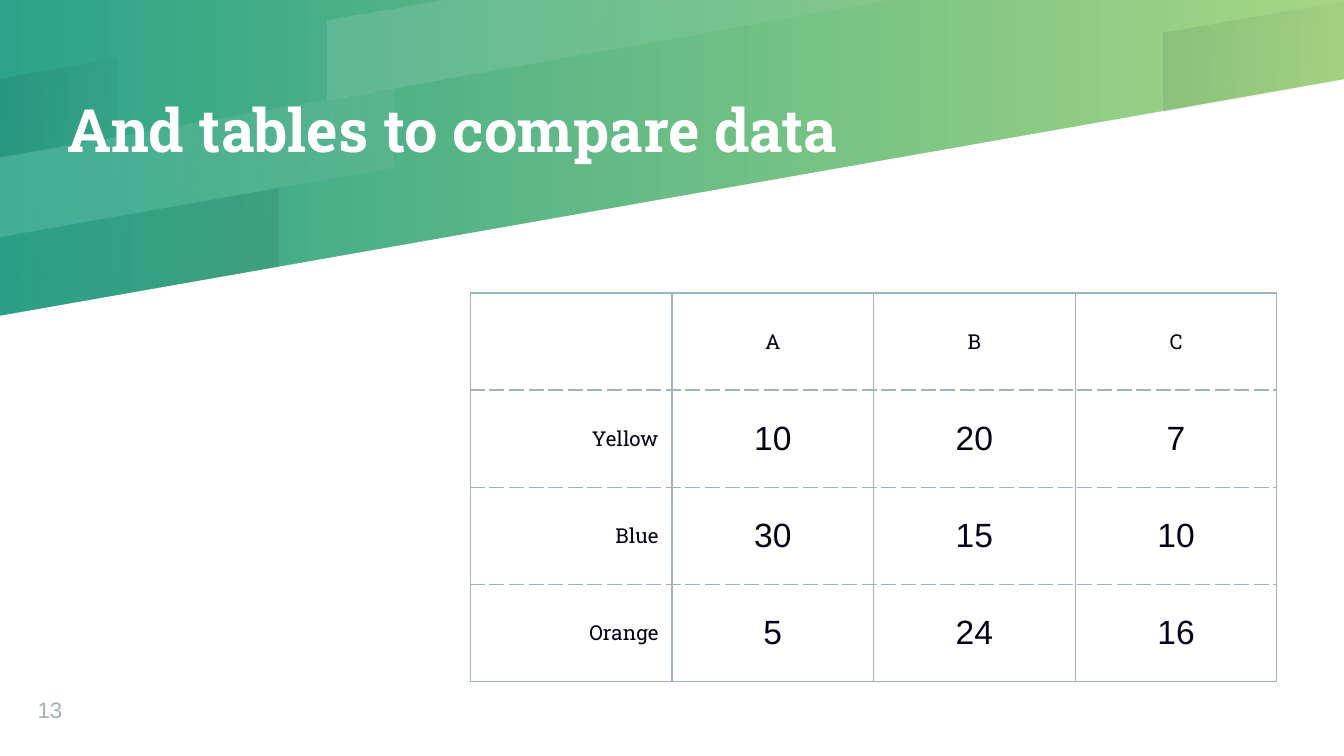
from dataclasses import dataclass

from lxml import etree
from pptx import Presentation
from pptx.dml.color import RGBColor
from pptx.enum import text
from pptx.oxml import ns
from pptx.util import Inches, Pt


@dataclass(frozen=True)
class Theme:
    """Colours, fonts and type sizes of the slide."""
    teal: str = "2CA388"
    lime: str = "A6D683"
    white: str = "FFFFFF"
    ink: str = "00001A"
    grey: str = "9EB3C2"
    head_font: str = "Roboto Slab"
    body_font: str = "Arial"
    title_size: int = 32
    value_size: int = 18
    label_size: int = 11
    number_size: int = 12
    border: float = 0.75


THEME = Theme()
SLOPE = 0.176
BAND_HEIGHT = 0.59
LIGHT = (THEME.white, 12, 5)
DARK = (THEME.ink, 8, 2)
DARK_REVERSED = (THEME.ink, 2, 8)
BANDS = [
    (0, 0.87, 0.58, DARK),
    (0, 2.07, 1.76, DARK_REVERSED),
    (8.66, 10, 0.24, DARK),
    (0, 2.93, 1.17, LIGHT),
]
ROWS = [
    ["", "A", "B", "C"],
    ["Yellow", "10", "20", "7"],
    ["Blue", "30", "15", "10"],
    ["Orange", "5", "24", "16"],
]


def add_element(parent, tag, **attributes):
    """Append a DrawingML element to parent and return it."""
    return etree.SubElement(parent, ns.qn(f"a:{tag}"), attributes)


def set_gradient(fill, colors, angle=0):
    """Give a fill a two-stop linear gradient, with a clockwise angle."""
    fill.gradient()
    fill.gradient_angle = -angle % 360
    for stop, color, position in zip(fill.gradient_stops, colors, (0, 1)):
        stop.color.rgb = RGBColor.from_string(color)
        stop.position = position


def add_polygon(s, points):
    """Draw a closed outline through points given in inches."""
    corners = [(Inches(x), Inches(y)) for x, y in points]
    builder = s.shapes.build_freeform(*corners[0])
    builder.add_line_segments(corners[1:], close=True)
    sp = builder.convert_to_shape()
    sp.shadow.inherit = False
    sp.line.fill.background()
    return sp


def add_band(s, points, tint):
    """Draw a band with a gradient of translucent colour."""
    color, *alphas = tint
    sp = add_polygon(s, points)
    set_gradient(sp.fill, (color, color), 10)
    for node, alpha in zip(sp._element.spPr.iter(ns.qn("a:srgbClr")), alphas):
        add_element(node, "alpha", val=str(alpha * 1000))


def band_points(left, right, top):
    """Return the corners of a band that rises to the right."""
    end = max(0, top - SLOPE * (right - left))
    return [(left, top), (left, top + BAND_HEIGHT),
            (right, end + BAND_HEIGHT), (right, end)]


def format_run(r, size, font, color, bold=False):
    """Set the font of a run."""
    r.font.size = Pt(size)
    r.font.bold = bold
    r.font.color.rgb = RGBColor.from_string(color)
    r.font.name = font


def add_text(s, words, box, anchor, **font):
    """Add a text box without margins and return its paragraph."""
    tf = s.shapes.add_textbox(*map(Inches, box)).text_frame
    tf.word_wrap = True
    tf.margin_left = tf.margin_right = tf.margin_top = tf.margin_bottom = 0
    tf.vertical_anchor = anchor
    p = tf.paragraphs[0]
    p.text = words
    format_run(p.runs[0], **font)
    return p


def add_text_shadow(r):
    """Put a soft shadow behind the letters of a run."""
    effects = etree.Element(ns.qn("a:effectLst"))
    shadow = add_element(effects, "outerShdw", blurRad="38100", dist="28575",
                         dir="2700000", algn="bl", rotWithShape="0")
    color = add_element(shadow, "srgbClr", val=THEME.ink)
    add_element(color, "alpha", val="30000")
    r.font._element.find(ns.qn("a:solidFill")).addnext(effects)


def add_border(cell, side, dash):
    """Draw one side of a cell."""
    line = add_element(cell._tc.get_or_add_tcPr(), f"ln{side}",
                       w=str(Pt(THEME.border)))
    fill = add_element(line, "solidFill")
    add_element(fill, "srgbClr", val=THEME.grey)
    add_element(line, "prstDash", val=dash)


def format_cell(cell, words, row, column):
    """Fill in a cell, dashing the rules between rows."""
    for side in "LRTB":
        inner = (side == "T" and row > 0) or (side == "B" and row < len(ROWS) - 1)
        add_border(cell, side, "lgDash" if inner else "solid")
    cell.fill.background()
    cell.vertical_anchor = text.MSO_ANCHOR.MIDDLE
    cell.margin_top = cell.margin_bottom = Inches(0.07)
    cell.text = words
    p = cell.text_frame.paragraphs[0]
    is_row_label = column == 0
    p.alignment = text.PP_ALIGN.RIGHT if is_row_label else text.PP_ALIGN.CENTER
    is_label = row == 0 or is_row_label
    size = THEME.label_size if is_label else THEME.value_size
    font = THEME.head_font if is_label else THEME.body_font
    for r in p.runs:
        format_run(r, size, font, THEME.ink)


def add_data_table(s):
    """Add the comparison table."""
    frame = s.shapes.add_table(len(ROWS), len(ROWS[0]), Inches(3.5),
                               Inches(2.18), Inches(6), Inches(2.89))
    table = frame.table
    table.first_row = table.horz_banding = False
    for i, values in enumerate(ROWS):
        for j, words in enumerate(values):
            format_cell(table.cell(i, j), words, i, j)


def main():
    """Build the slide and save it."""
    prs = Presentation()
    prs.slide_width, prs.slide_height = Inches(10), Inches(5.625)
    s = prs.slides.add_slide(prs.slide_layouts[6])
    set_gradient(s.background.fill, (THEME.teal, THEME.lime))

    page = add_polygon(s, [(0, 5.63), (10, 5.63), (10, 0.59), (0, 2.35)])
    page.fill.solid()
    page.fill.fore_color.rgb = RGBColor.from_string(THEME.white)
    add_band(s, [(3.32, 0), (2.44, 0.15), (2.44, 0.74), (6.65, 0)], LIGHT)
    for left, right, top, tint in BANDS:
        add_band(s, band_points(left, right, top), tint)

    title = add_text(s, "And tables to compare data", (0.5, 0, 6, 1.98),
                     text.MSO_ANCHOR.MIDDLE, size=THEME.title_size,
                     font=THEME.head_font, color=THEME.white, bold=True)
    title.line_spacing = 0.9
    add_text_shadow(title.runs[0])
    add_data_table(s)
    add_text(s, "13", (0.28, 5.11, 0.53, 0.27), text.MSO_ANCHOR.BOTTOM,
             size=THEME.number_size, font=THEME.body_font, color=THEME.grey)
    prs.save("out.pptx")


if __name__ == "__main__":
    main()
